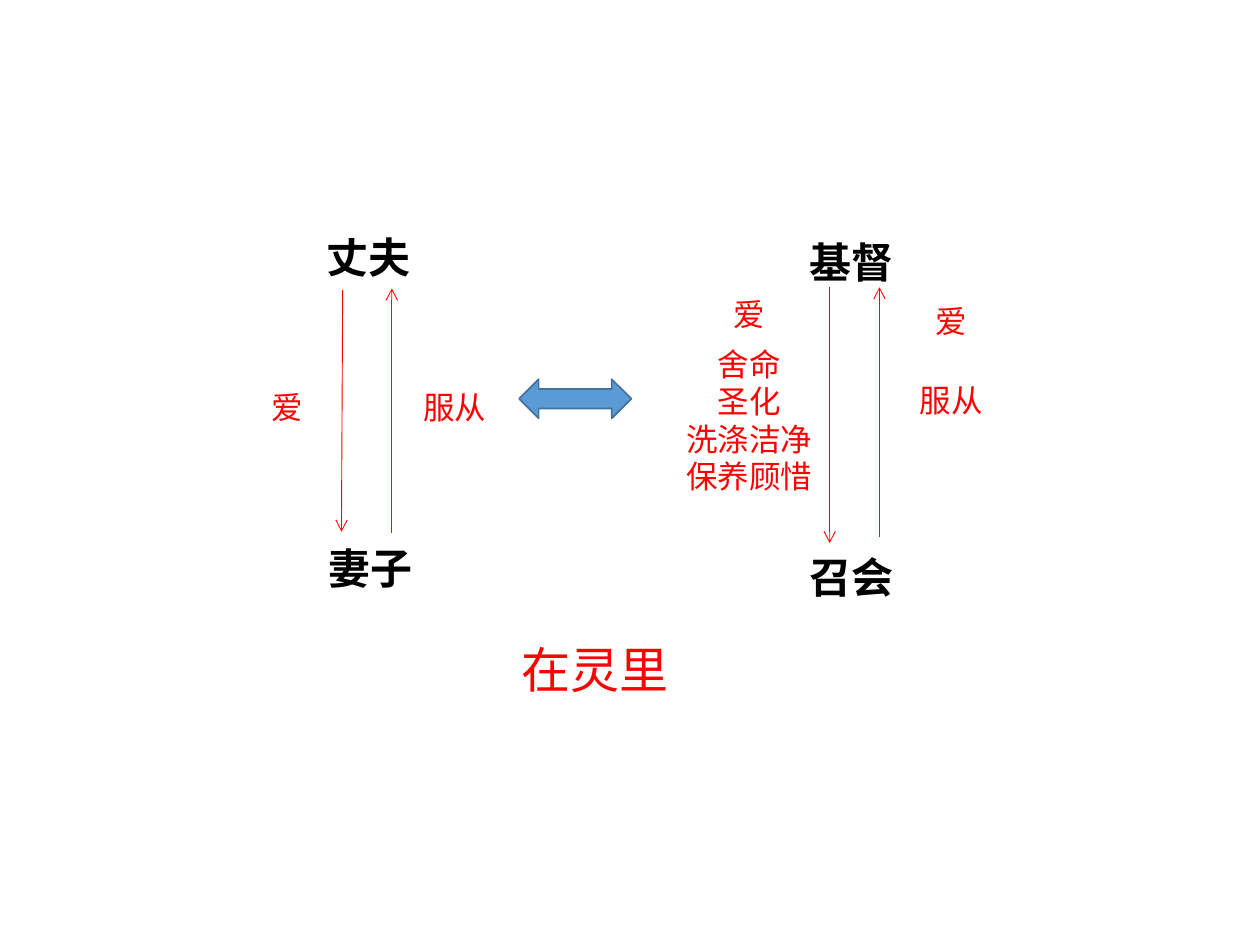
from dataclasses import dataclass

from lxml.etree import SubElement
from pptx import Presentation
from pptx.dml.color import RGBColor
from pptx.enum.shapes import MSO_CONNECTOR, MSO_SHAPE
from pptx.enum.text import MSO_AUTO_SIZE, PP_ALIGN
from pptx.oxml.ns import qn
from pptx.util import Inches, Pt


@dataclass(frozen=True)
class Theme:
    heading_font: str = "Calibri"
    label_font: str = "Noto Sans CJK SC"
    black: RGBColor = RGBColor(0x00, 0x00, 0x00)
    red: RGBColor = RGBColor(0xFF, 0x00, 0x00)
    blue: RGBColor = RGBColor(0x5B, 0x9B, 0xD5)
    blue_edge: RGBColor = RGBColor(0x43, 0x73, 0x9E)
    heading_size: int = 24
    label_size: int = 18
    footer_size: int = 28
    label_leading: float = 1.19


class RelationSlide:
    def __init__(self, slide, theme):
        self.slide = slide
        self.theme = theme

    def _text(self, lines, box, font_name, size, color, bold=False):
        frame = self.slide.shapes.add_textbox(*map(Inches, box)).text_frame
        frame.word_wrap = len(lines) > 1
        frame.auto_size = MSO_AUTO_SIZE.SHAPE_TO_FIT_TEXT
        frame.text = "\n".join(lines)
        for paragraph in frame.paragraphs:
            font = paragraph.font
            font.name, font.size, font.bold = font_name, Pt(size), bold
            font.color.rgb = color
            # East Asian characters take their own typeface
            for run in paragraph.runs:
                properties = run._r.get_or_add_rPr()
                properties.set("lang", "zh-CN")
                SubElement(properties, qn("a:ea"), typeface=font_name)
            if len(lines) > 1:
                paragraph.alignment = PP_ALIGN.CENTER
        return frame

    def heading(self, text, left, top):
        theme = self.theme
        self._text([text], (left, top, 0.87, 0.5), theme.heading_font,
                   theme.heading_size, theme.black, bold=True)

    def label(self, lines, left, top, width, height=0.4, size=None):
        theme = self.theme
        size = size or theme.label_size
        frame = self._text(lines, (left, top, width, height),
                           theme.label_font, size, theme.red)
        frame.margin_top, frame.margin_bottom = Inches(0.07), Inches(0.03)
        for paragraph in frame.paragraphs:
            paragraph.line_spacing = Pt(size * theme.label_leading)

    def arrow(self, start, end):
        connector = self.slide.shapes.add_connector(
            MSO_CONNECTOR.STRAIGHT, *map(Inches, (*start, *end)))
        connector.line.color.rgb = self.theme.red
        connector.line.width = Pt(0.5)
        SubElement(connector.line._get_or_add_ln(), qn("a:tailEnd"), type="arrow")
        SubElement(connector._element.spPr, qn("a:effectLst"))

    def double_arrow(self, left, top, width, height):
        shape = self.slide.shapes.add_shape(
            MSO_SHAPE.LEFT_RIGHT_ARROW, *map(Inches, (left, top, width, height)))
        shape.shadow.inherit = False
        shape.fill.solid()
        shape.fill.fore_color.rgb = self.theme.blue
        shape.line.color.rgb = self.theme.blue_edge
        shape.line.width = Pt(1)


def main():
    presentation = Presentation()
    presentation.slide_width, presentation.slide_height = Inches(10), Inches(7.5)
    theme = Theme()
    blank = presentation.slide_layouts[6]
    page = RelationSlide(presentation.slides.add_slide(blank), theme)

    # The two pairs
    for name, left, top in [("丈夫", 2.49, 1.79), ("妻子", 2.51, 4.26),
                            ("基督", 6.33, 1.83), ("召会", 6.33, 4.33)]:
        page.heading(name, left, top)

    # Love goes down, obedience goes up
    for start, end in [((2.72, 2.3), (2.71, 4.22)), ((6.585, 2.28), (6.585, 4.31)),
                       ((3.11, 4.23), (3.11, 2.29)), ((6.98, 4.26), (6.98, 2.28))]:
        page.arrow(start, end)

    # Husband and wife
    page.label(["爱"], 2.06, 3.01, 0.45)
    page.label(["服从"], 3.26, 3.01, 0.7)

    # Comparison between the pairs
    page.double_arrow(4.12, 3.01, 0.89, 0.31)

    # Christ and the church
    page.label(["爱"], 5.72, 2.27, 0.45)
    page.label(["舍命", "圣化", "洗涤洁净", "保养顾惜"], 5.31, 2.67, 1.27, 1.31)
    page.label(["服从"], 7.2, 2.96, 0.7)
    page.label(["爱"], 7.33, 2.33, 0.45)

    # Shared ground
    page.label(["在灵里"], 4.04, 5.01, 1.37, 0.57, theme.footer_size)

    presentation.save("out.pptx")


if __name__ == "__main__":
    main()
